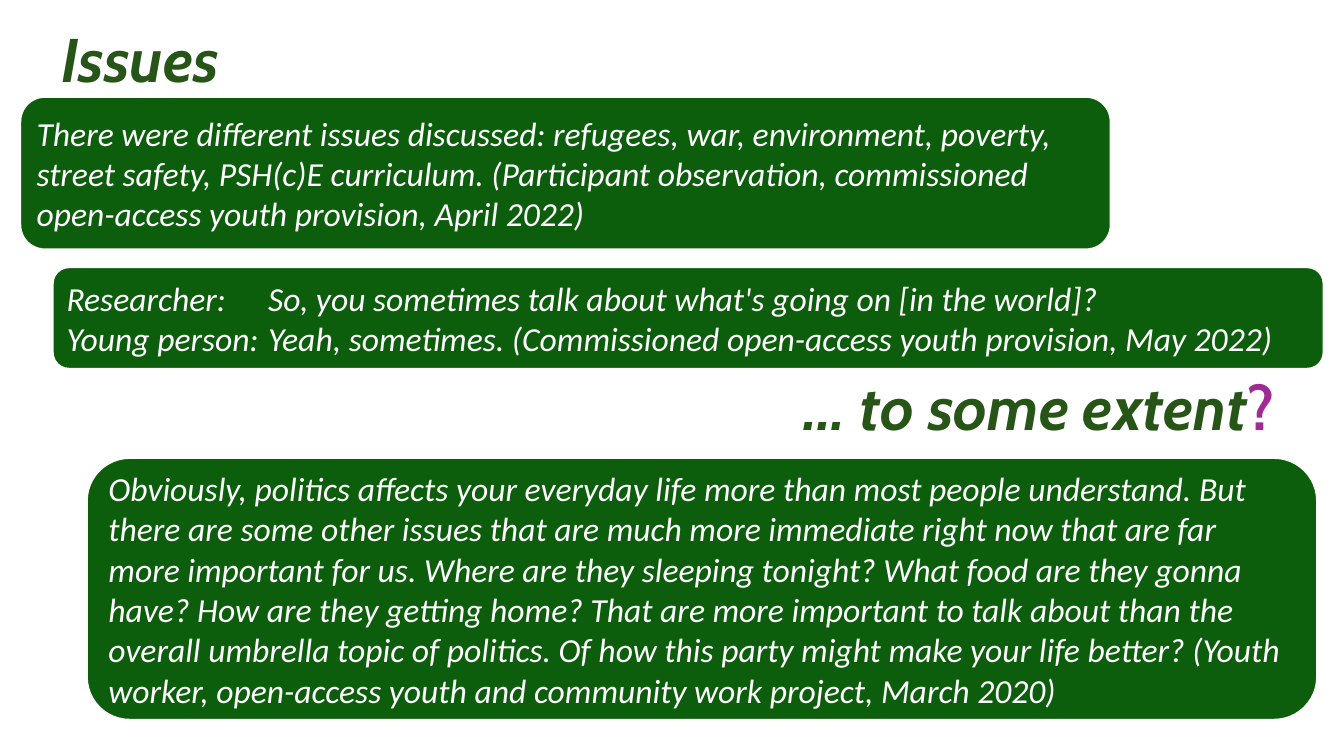
"""Build the Issues slide: two headings and three quotation panels."""
import pptx
import pptx.dml.color
import pptx.enum.shapes
import pptx.enum.text
import pptx.util

Pt = pptx.util.Pt
RGB = pptx.dml.color.RGBColor
ALIGN = pptx.enum.text.PP_ALIGN
ANCHOR = pptx.enum.text.MSO_ANCHOR

COLORS = {"heading": "275417", "accent": "A02B93", "panel": "0C5E0C", "white": "FFFFFF"}
HEADING_FONT, QUOTE_FONT = "Cabin", "Calibri"

TITLE = "Issues"
TITLE_BOX = (36.9, 16.56, 856.8, 56.16)
EXTENT = "… to some extent"
EXTENT_BOX = (557.28, 267.84, 388.8, 54)
EXTENT_INDENT = 16.6
QUOTE_RIGHT_MARGIN = 12

QUOTES = [
    ((13.68, 68.4, 780.48, 110.6), [
        "There were different issues discussed: refugees, war, environment, poverty, "
        "street safety, PSH(c)E curriculum. (Participant observation, commissioned "
        "open-access youth provision, April 2022)",
    ]),
    ((61.2, 326.3, 880.4, 188.64), [
        "Obviously, politics affects your everyday life more than most people understand. "
        "But there are some other issues that are much more immediate right now that are "
        "far more important for us. Where are they sleeping tonight? What food are they "
        "gonna have? How are they getting home? That are more important to talk about than "
        "the overall umbrella topic of politics. Of how this party might make your life "
        "better? (Youth worker, open-access youth and community work project, March 2020)",
    ]),
    ((36.9, 190.08, 909.36, 74.16), [
        "Researcher: \tSo, you sometimes talk about what's going on [in the world]?",
        "Young person:\tYeah, sometimes. (Commissioned open-access youth provision, May 2022)",
    ]),
]


def add_run(p, text, font, size, color, bold=False, italic=True):
    """Add one formatted run to a paragraph."""
    r = p.add_run()
    r.text = text
    r.font.name = font
    r.font.size = Pt(size)
    r.font.bold = bold
    r.font.italic = italic
    r.font.color.rgb = RGB.from_string(COLORS[color])


def prepare(sp):
    """Set wrapping and middle anchoring, and return the text frame."""
    tf = sp.text_frame
    tf.word_wrap = True
    tf.auto_size = pptx.enum.text.MSO_AUTO_SIZE.NONE
    tf.vertical_anchor = ANCHOR.MIDDLE
    return tf


def add_heading(sp, text, spacing):
    """Write a bold heading and return its paragraph."""
    p = prepare(sp).paragraphs[0]
    p.alignment = ALIGN.LEFT
    p.line_spacing = spacing
    add_run(p, text, HEADING_FONT, 44, "heading", bold=True)
    return p


def add_quote(s, box, lines):
    """Draw a rounded panel holding one paragraph per line."""
    sp = s.shapes.add_shape(pptx.enum.shapes.MSO_SHAPE.ROUNDED_RECTANGLE, *map(Pt, box))
    sp.shadow.inherit = False
    sp.fill.solid()
    sp.fill.fore_color.rgb = RGB.from_string(COLORS["panel"])
    sp.line.color.rgb = RGB.from_string(COLORS["white"])
    sp.line.width = Pt(3)
    tf = prepare(sp)
    tf.margin_right = Pt(QUOTE_RIGHT_MARGIN)
    for i, line in enumerate(lines):
        p = tf.add_paragraph() if i else tf.paragraphs[0]
        p.alignment = ALIGN.LEFT
        for j, part in enumerate(line.split("\t")):
            add_run(p, "\t" + part if j else part, QUOTE_FONT, 24, "white")


def main():
    """Assemble and save the slide."""
    prs = pptx.Presentation()
    prs.slide_width, prs.slide_height = Pt(960), Pt(540)
    s = prs.slides.add_slide(prs.slide_layouts[5])

    title = s.shapes.title
    title.left, title.top, title.width, title.height = map(Pt, TITLE_BOX)
    add_heading(title, TITLE, 0.9)

    for box, lines in QUOTES:
        add_quote(s, box, lines)

    extent = s.shapes.add_textbox(*map(Pt, EXTENT_BOX))
    p = add_heading(extent, EXTENT, 0.8)
    extent.text_frame.margin_left = Pt(EXTENT_INDENT)
    add_run(p, "?", HEADING_FONT, 44, "accent", bold=True, italic=False)

    prs.save("out.pptx")


if __name__ == "__main__":
    main()
